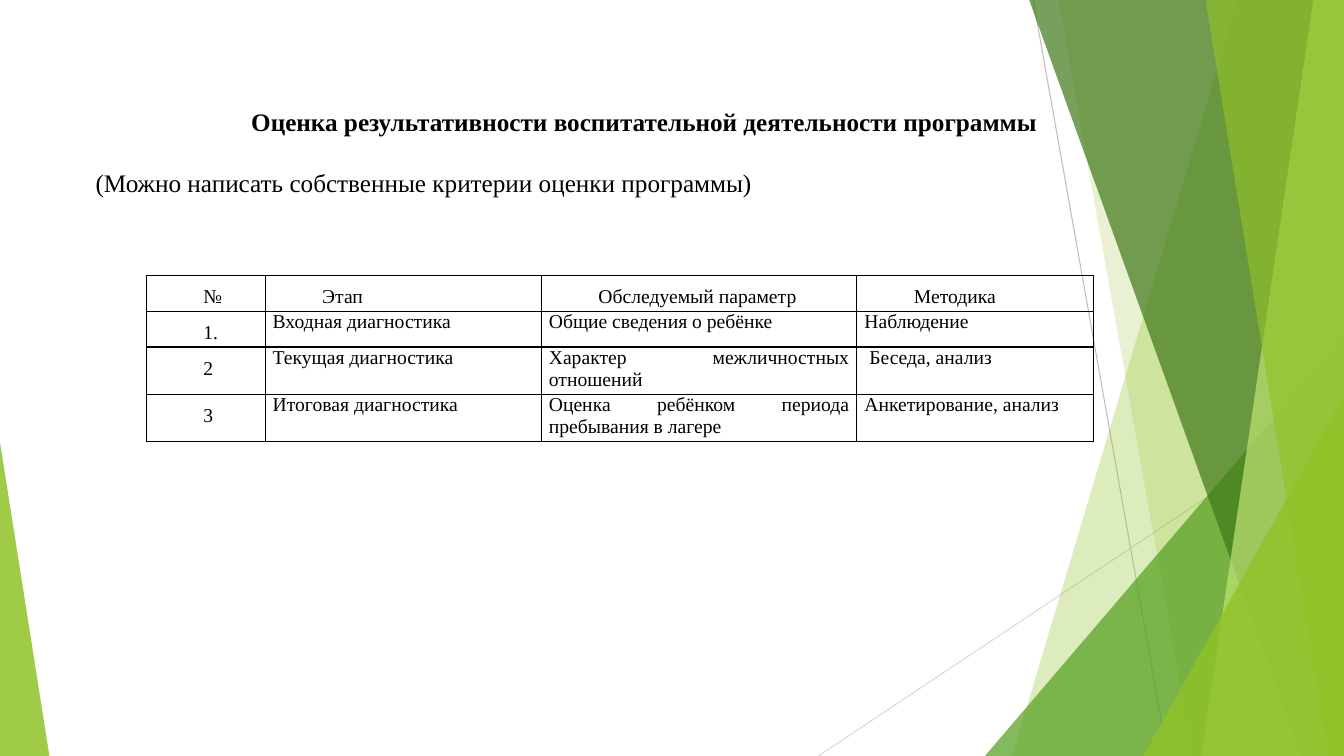
from lxml.etree import SubElement
from pptx import Presentation
from pptx.dml.color import RGBColor
from pptx.enum.shapes import MSO_CONNECTOR, MSO_SHAPE
from pptx.enum.text import PP_ALIGN
from pptx.oxml import parse_xml
from pptx.oxml.ns import nsdecls, qn
from pptx.util import Pt

BLACK = RGBColor(0, 0, 0)
LIME = RGBColor(0x90, 0xC2, 0x26)
GREEN = RGBColor(0x54, 0xA0, 0x21)
DARK = RGBColor(0x3F, 0x78, 0x19)
PALE = RGBColor(0xC0, 0xE4, 0x74)
GREY = RGBColor(0xBF, 0xBF, 0xBF)
MIST = RGBColor(0xD9, 0xD9, 0xD9)
FONT = "Times New Roman"
WIDE, HIGH = 960, 540

ROWS = [
    ["№", "Этап", "Обследуемый параметр", "Методика"],
    ["1.", "Входная диагностика", "Общие сведения о ребёнке", "Наблюдение"],
    ["2", "Текущая диагностика", "Характер межличностных отношений", " Беседа, анализ"],
    ["3", "Итоговая диагностика", "Оценка ребёнком периода пребывания в лагере",
     "Анкетирование, анализ"],
]


def paint(shape, color, alpha):
    """Fill a shape with a see-through colour and no outline."""
    shape.shadow.inherit = False
    shape.line.fill.background()
    shape.fill.solid()
    shape.fill.fore_color.rgb = color
    tint = shape._element.spPr.find(qn("a:solidFill"))[0]
    SubElement(tint, qn("a:alpha")).set("val", str(alpha * 1000))


def add_line(slide, start, end, color):
    """Draw one thin straight line."""
    line = slide.shapes.add_connector(
        MSO_CONNECTOR.STRAIGHT, *[Pt(v) for v in start + end])
    line.line.color.rgb = color
    line.line.width = Pt(0.75)
    SubElement(line._element.spPr, qn("a:effectLst"))


def add_blade(slide, top, foot, color, alpha):
    """Draw a band from a slanted left edge to the right slide edge."""
    form = slide.shapes.build_freeform(Pt(top), Pt(-0.6), scale=1.0)
    points = [(WIDE, -0.6), (WIDE, HIGH), (foot, HIGH)]
    form.add_line_segments([(Pt(x), Pt(y)) for x, y in points], close=True)
    paint(form.convert_to_shape(), color, alpha)


def add_wedge(slide, box, apex, color, alpha):
    """Draw a right triangle whose apex is at the left (0) or right (1)."""
    shape = slide.shapes.add_shape(
        MSO_SHAPE.ISOSCELES_TRIANGLE, *[Pt(v) for v in box])
    shape.adjustments[0] = apex
    paint(shape, color, alpha)


def add_decor(slide):
    """Draw the green facets from back to front."""
    add_line(slide, (738, 0), (834, HIGH), GREY)
    add_line(slide, (WIDE, 290), (584.6, HIGH), MIST)
    add_blade(slide, 884.2, 723, LIME, 30)
    add_blade(slide, 756, 852, LIME, 20)
    add_wedge(slide, (703.5, 240, 256.5, 300), 1, GREEN, 72)
    add_blade(slide, 735, 929.5, DARK, 70)
    add_blade(slide, 938.2, 858.2, PALE, 70)
    add_blade(slide, 861, 949, LIME, 65)
    add_wedge(slide, (816.5, 283, 143.5, 257), 1, LIME, 80)
    add_wedge(slide, (0, 316, 35.3, 224), 0, LIME, 85)


def style(par, size, bold=False):
    """Set the font of all runs in a paragraph."""
    for run in par.runs:
        run.font.name = FONT
        run.font.size = Pt(size)
        run.font.bold = bold
        run.font.color.rgb = BLACK


def add_title(slide, box):
    """Write the heading and the remark under it."""
    frame = slide.shapes.add_textbox(*[Pt(v) for v in box]).text_frame
    frame.word_wrap = True
    head = frame.paragraphs[0]
    head.text = "Оценка результативности воспитательной деятельности программы"
    head.alignment = PP_ALIGN.CENTER
    style(head, 18, True)
    note = frame.add_paragraph()
    note.text = "(Можно написать собственные критерии оценки программы)"
    note.space_before = Pt(22)
    style(note, 18)


def add_frame(cell):
    """Give a cell thin black borders and no fill."""
    cell.fill.background()
    props = cell._tc.get_or_add_tcPr()
    for spot, side in enumerate(("lnL", "lnR", "lnT", "lnB")):
        props.insert(spot, parse_xml(
            f'<a:{side} {nsdecls("a")} w="12700"><a:solidFill>'
            f'<a:srgbClr val="{BLACK}"/></a:solidFill></a:{side}>'))


def add_grid(slide, box, widths, heights):
    """Build the table of diagnostic stages."""
    table = slide.shapes.add_table(
        len(ROWS), len(widths), *[Pt(v) for v in box]).table
    table.first_row = table.horz_banding = False
    for col, width in zip(table.columns, widths):
        col.width = Pt(width)
    for r, (row, height) in enumerate(zip(table.rows, heights)):
        row.height = Pt(height)
        for c, cell in enumerate(row.cells):
            cell.margin_left = cell.margin_right = Pt(5.4)
            cell.margin_top = cell.margin_bottom = 0
            par = cell.text_frame.paragraphs[0]
            par.text = ROWS[r][c]
            par.alignment = PP_ALIGN.JUSTIFY
            style(par, 14)
            if r == 0 or c == 0:
                par.line_spacing = 1.5
                par._p.get_or_add_pPr().set("indent", str(Pt(35.4)))
            add_frame(cell)


def main():
    """Build and save the slide."""
    deck = Presentation()
    deck.slide_width, deck.slide_height = Pt(WIDE), Pt(HIGH)
    slide = deck.slides.add_slide(deck.slide_layouts[6])
    add_decor(slide)
    add_title(slide, (61.2, 72.7, 797.8, 94.3))
    add_grid(slide, (104.4, 196.9, 676.8, 118),
             (85, 197.3, 225.4, 169.2), (25.5, 25.5, 33.5, 33.5))
    deck.save("out.pptx")


if __name__ == "__main__":
    main()
